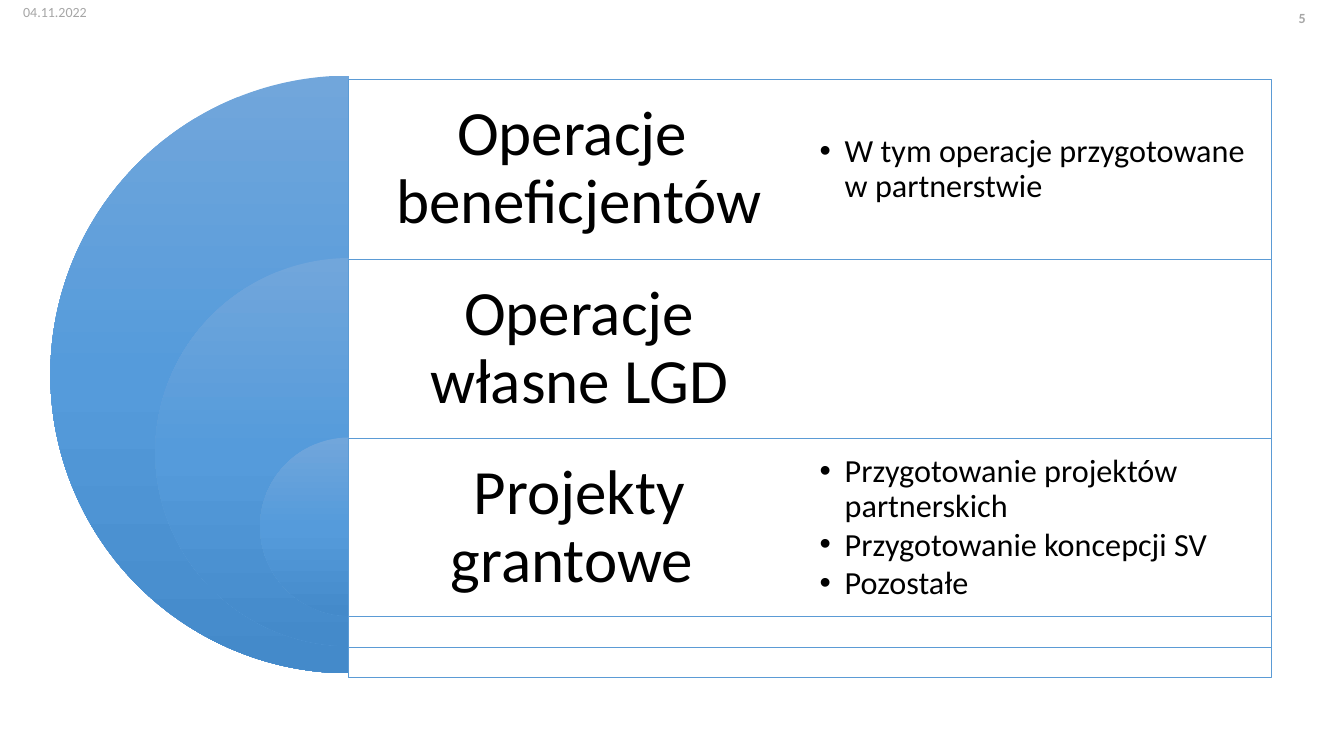
from copy import deepcopy

from lxml import etree
from pptx import Presentation
from pptx import util as u
from pptx.dml.color import RGBColor
from pptx.enum import shapes, text
from pptx.oxml.ns import qn

PX = 9144
COLORS = {"white": "FFFFFF", "line": "5B9BD5", "text": "000000", "muted": "A6A6A6"}
PIE_STOPS = [(0, "71A6DB"), (0.5, "559BDB"), (1, "448ACA")]
BULLET_INDENT = 25
ROW_H = 178
DIAMETER_STEP = 208
ROWS = [
    ("Operacje  beneficjentów", 75, ["W tym operacje przygotowane w partnerstwie"]),
    ("Operacje własne LGD", 256, []),
    ("Projekty grantowe ", 434, ["Przygotowanie projektów partnerskich",
                                 "Przygotowanie koncepcji SV", "Pozostałe"]),
]


def px(*lengths):
    """Turn lengths in px into EMU."""
    return [u.Emu(n * PX) for n in lengths]


def rgb(name):
    """Look up a named colour."""
    return RGBColor.from_string(COLORS[name])


def add_text(slide, box, lines, size, color="text", bold=False, inset=10,
             align=text.PP_ALIGN.LEFT, anchor=text.MSO_ANCHOR.MIDDLE):
    """Place a text box and return its paragraphs."""
    tf = slide.shapes.add_textbox(*px(*box)).text_frame
    tf.word_wrap = True
    tf.vertical_anchor = anchor
    tf.margin_left, tf.margin_top, tf.margin_right, tf.margin_bottom = px(*[inset] * 4)
    for i, line in enumerate(lines):
        p = tf.add_paragraph() if i else tf.paragraphs[0]
        p.alignment = align
        r = p.add_run()
        r.text = line
        r.font.size, r.font.name, r.font.bold = u.Pt(size), "Calibri", bold
        r.font.color.rgb = rgb(color)
    return tf.paragraphs


def add_half_disc(slide, center_x, top, diameter):
    """Draw the left half of a disc with a vertical gradient."""
    box = px(center_x - diameter // 2, top, diameter, diameter)
    sp = slide.shapes.add_shape(shapes.MSO_SHAPE.PIE, *box)
    sp.shadow.inherit = False
    sp.adjustments[0], sp.adjustments[1] = 54, 162
    sp.line.fill.background()
    sp.fill.gradient()
    sp.fill.gradient_angle = 270
    stops = sp.element.spPr.find(qn("a:gradFill")).find(qn("a:gsLst"))
    stops.append(deepcopy(stops[-1]))
    for stop, (position, color) in zip(sp.fill.gradient_stops, PIE_STOPS):
        stop.position = position
        stop.color.rgb = RGBColor.from_string(color)


def add_panel(slide, box):
    """Draw an outlined, slightly transparent panel."""
    sp = slide.shapes.add_shape(shapes.MSO_SHAPE.RECTANGLE, *px(*box))
    sp.shadow.inherit = False
    sp.fill.solid()
    sp.fill.fore_color.rgb = rgb("white")
    color = sp.element.spPr.find(qn("a:solidFill"))[0]
    etree.SubElement(color, qn("a:alpha"), val="90000")
    sp.line.color.rgb = rgb("line")
    sp.line.width = u.Pt(0.5)


def add_bullets(slide, box, lines):
    """Place a bulleted list."""
    for p in add_text(slide, box, lines, 23):
        p.line_spacing = 0.9
        p.space_after = u.Pt(3)
        pPr = p._p.get_or_add_pPr()
        pPr.set("marL", str(BULLET_INDENT * PX))
        pPr.set("indent", str(-BULLET_INDENT * PX))
        etree.SubElement(pPr, qn("a:buFont"), typeface="Arial")
        etree.SubElement(pPr, qn("a:buChar"), char="•")


def add_target_list(slide, x, y, w, h):
    """Build the nested half discs with a title and bullets in each row."""
    half = w // 2
    for i, (title, disc_top, bullets) in enumerate(ROWS):
        top, size = y + i * ROW_H, h - i * DIAMETER_STEP
        add_half_disc(slide, x, disc_top, size)
        add_panel(slide, (x, top, w, size))
        p, = add_text(slide, (x, top, half, ROW_H), [title], 45, inset=19,
                      align=text.PP_ALIGN.CENTER)
        p.line_spacing = 0.9
        if bullets:
            add_bullets(slide, (x + half, top, half, ROW_H), bullets)


def add_header(slide, x, y, w, h):
    """Place the date on the left and the page number on the right."""
    top = text.MSO_ANCHOR.TOP
    add_text(slide, (x, y, 300, h), ["04.11.2022"], 10, "muted", inset=5, anchor=top)
    add_text(slide, (x + w - 300, y + 6, 300, h), ["5"], 10, "muted", True, 5,
             text.PP_ALIGN.RIGHT, top)


def main():
    """Build and save the slide."""
    prs = Presentation()
    prs.slide_width, prs.slide_height = px(1333, 750)
    slide = prs.slides.add_slide(prs.slide_layouts[6])
    add_header(slide, 18, -1, 1282, 40)
    add_target_list(slide, 346, 79, 915, 593)
    prs.save("out.pptx")


if __name__ == "__main__":
    main()
